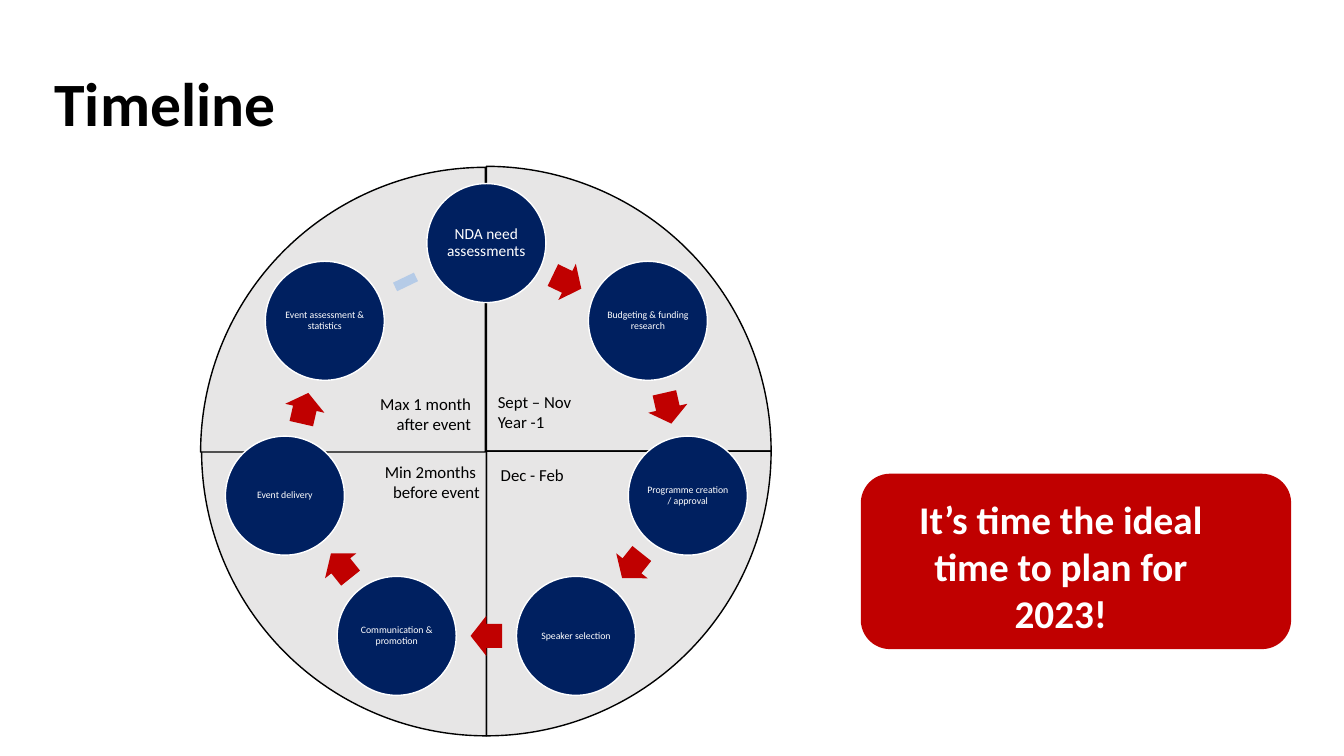
import math
from dataclasses import dataclass

import pptx
import pptx.dml.color
import pptx.enum.shapes
import pptx.enum.text
import pptx.util

Pt = pptx.util.Pt
SHAPE = pptx.enum.shapes.MSO_SHAPE
ALIGN = pptx.enum.text.PP_ALIGN
ANCHOR = pptx.enum.text.MSO_ANCHOR

NAVY, RED, GREY, PALE_BLUE = "002060", "C00000", "E7E6E6", "B5CBE7"
BLACK, WHITE = "000000", "FFFFFF"

RING_X, RING_Y, RING_RADIUS = 347.4, 321.2, 147.6
STEP_SIZE = 85
ARROW_W, ARROW_H = 22.5, 28.7
PIE_SIZE = 406.8


@dataclass
class Step:
    label: str
    size: float = 7


@dataclass
class Quadrant:
    """A quarter of the year wheel, starting at an angle in degrees."""
    start: int
    x: float = 144
    y: float = 118.8


@dataclass
class Period:
    text: str
    x: float
    y: float
    w: float
    h: float
    align: ALIGN = ALIGN.LEFT


STEPS = [
    Step("NDA need assessments", 11),
    Step("Budgeting & funding research"),
    Step("Programme creation / approval"),
    Step("Speaker selection"),
    Step("Communication & promotion"),
    Step("Event delivery"),
    Step("Event assessment & statistics"),
]
QUADRANTS = [Quadrant(270), Quadrant(0), Quadrant(90), Quadrant(180, 143.3, 119.5)]
PERIODS = [
    Period("Max 1 month \nafter event ", 213.1, 277.9, 133.2, 58.3, ALIGN.RIGHT),
    Period("Sept – Nov\nYear -1", 348.5, 276.5, 133.2, 58.3),
    Period("Min 2months \nbefore event", 241.9, 326.2, 108, 58.3, ALIGN.RIGHT),
    Period("Dec - Feb", 350.6, 328.3, 78.5, 43.9),
]


def rgb(value: str) -> pptx.dml.color.RGBColor:
    return pptx.dml.color.RGBColor.from_string(value)


def add_solid(s, kind, x: float, y: float, w: float, h: float, fill: str, line: str = ""):
    sp = s.shapes.add_shape(kind, Pt(x), Pt(y), Pt(w), Pt(h))
    sp.shadow.inherit = False
    sp.fill.solid()
    sp.fill.fore_color.rgb = rgb(fill)
    if line:
        sp.line.color.rgb = rgb(line)
        sp.line.width = Pt(1)
    else:
        sp.line.fill.background()
    return sp


def set_text(sp, text: str, size: float, color: str, align, anchor,
             insets: tuple = (7.2, 3.6, 7.2, 3.6), spacing: float = 1.0, bold: bool = False) -> None:
    """Fill a text frame; insets run left, top, right, bottom."""
    tf = sp.text_frame
    tf.text = text
    tf.word_wrap = True
    tf.auto_size = pptx.enum.text.MSO_AUTO_SIZE.NONE
    tf.vertical_anchor = anchor
    tf.margin_left, tf.margin_top, tf.margin_right, tf.margin_bottom = map(Pt, insets)
    for p in tf.paragraphs:
        p.alignment = align
        p.line_spacing = spacing
        for r in p.runs:
            r.font.name = "Calibri"
            r.font.size = Pt(size)
            r.font.bold = bold
            r.font.color.rgb = rgb(color)


def ring_point(angle: float, radius: float) -> tuple[float, float]:
    """Point on the ring, with the angle in degrees clockwise from the top."""
    a = math.radians(angle)
    return RING_X + radius * math.sin(a), RING_Y - radius * math.cos(a)


def add_quadrant(s, quadrant: Quadrant) -> None:
    sp = add_solid(s, SHAPE.PIE, quadrant.x, quadrant.y, PIE_SIZE, PIE_SIZE, GREY, BLACK)
    sp.adjustments[0] = quadrant.start * 0.6
    sp.adjustments[1] = (quadrant.start + 90) % 360 * 0.6


def add_step(s, step: Step, angle: float) -> None:
    x, y = ring_point(angle, RING_RADIUS)
    sp = add_solid(s, SHAPE.OVAL, x - STEP_SIZE / 2, y - STEP_SIZE / 2,
                   STEP_SIZE, STEP_SIZE, NAVY, WHITE)
    set_text(sp, step.label, step.size, WHITE, ALIGN.CENTER, ANCHOR.MIDDLE, (1, 1, 1, 1), 0.9)


def add_link(s, angle: float, closing: bool) -> None:
    """Arrow between two steps; the closing link is a plain dash."""
    x, y = ring_point(angle, RING_RADIUS * math.cos(math.pi / len(STEPS)))
    kind, fill = (SHAPE.MATH_MINUS, PALE_BLUE) if closing else (SHAPE.RIGHT_ARROW, RED)
    sp = add_solid(s, kind, x - ARROW_W / 2, y - ARROW_H / 2, ARROW_W, ARROW_H, fill)
    sp.rotation = angle
    if not closing:
        sp.adjustments[0] = 0.6
        sp.adjustments[1] = 0.5


def add_period(s, period: Period) -> None:
    sp = s.shapes.add_textbox(Pt(period.x), Pt(period.y), Pt(period.w), Pt(period.h))
    set_text(sp, period.text, 12, BLACK, period.align, ANCHOR.TOP)


def main() -> None:
    prs = pptx.Presentation()
    prs.slide_width, prs.slide_height = Pt(960), Pt(540)
    s = prs.slides.add_slide(prs.slide_layouts[5])

    title = s.shapes.title
    title.left, title.top, title.width, title.height = Pt(38.9), Pt(5), Pt(756), Pt(95)
    set_text(title, "Timeline", 44, BLACK, ALIGN.LEFT, ANCHOR.BOTTOM, (0, 3.6, 7.2, 0), 0.9, True)

    for quadrant in QUADRANTS:
        add_quadrant(s, quadrant)
    pitch = 360 / len(STEPS)
    for i, step in enumerate(STEPS):
        add_step(s, step, i * pitch)
        add_link(s, (i + 0.5) * pitch, closing=i == len(STEPS) - 1)
    for period in PERIODS:
        add_period(s, period)

    callout = add_solid(s, SHAPE.ROUNDED_RECTANGLE, 614.9, 338.4, 307.4, 125.3, RED)
    set_text(callout, "It’s time the ideal time to plan for 2023!", 28, WHITE,
             ALIGN.CENTER, ANCHOR.TOP, (19, 9, 40.7, 0), bold=True)
    prs.save("out.pptx")


if __name__ == "__main__":
    main()
